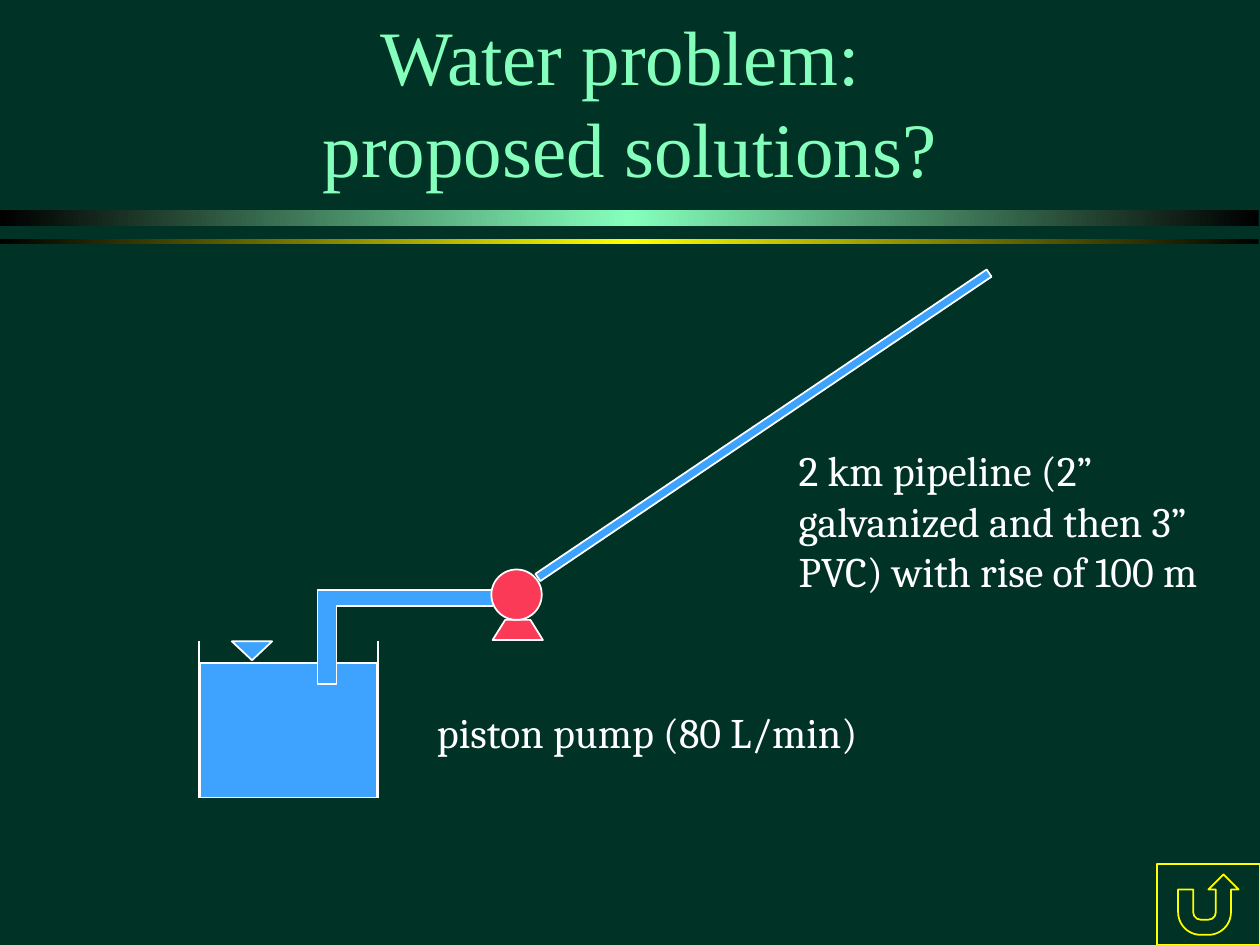
"""Builds the slide on proposed solutions to the water problem."""
from copy import deepcopy
from typing import NamedTuple, Optional

from lxml import etree
from pptx import Presentation
from pptx import util as u
from pptx.dml.color import RGBColor
from pptx.enum import shapes as s
from pptx.enum import text as t
from pptx.oxml import ns

BACKGROUND = RGBColor(0x00, 0x32, 0x25)
BLACK = RGBColor(0x00, 0x00, 0x00)
MINT = RGBColor(0x85, 0xFF, 0xBC)
YELLOW = RGBColor(0xFF, 0xFF, 0x00)
WHITE = RGBColor(0xFF, 0xFF, 0xFF)
WATER = RGBColor(0x3D, 0xA3, 0xFF)
PUMP = RGBColor(0xFA, 0x3A, 0x57)

KIND = s.MSO_SHAPE


class Box(NamedTuple):
    left: float
    top: float
    width: float
    height: float

    def inches(self) -> list:
        return [u.Inches(value) for value in self]


class Band(NamedTuple):
    box: Box
    color: RGBColor


class Part(NamedTuple):
    kind: KIND
    box: Box
    fill: Optional[RGBColor]
    line: RGBColor = WHITE
    rotation: float = 0


class Outline(NamedTuple):
    points: list
    fill: RGBColor
    closed: bool


class Label(NamedTuple):
    box: Box
    lines: list
    font: str = "Cambria"
    size: int = 24
    color: RGBColor = WHITE
    align: t.PP_ALIGN = t.PP_ALIGN.LEFT
    anchor: t.MSO_ANCHOR = t.MSO_ANCHOR.TOP
    wrap: bool = True
    shadow: bool = False


BANDS = [
    Band(Box(0, 1.67, 9.99, 0.12), MINT),
    Band(Box(0, 1.9, 9.99, 0.04), YELLOW),
]
TANK_WALLS = [
    ((1.58, 5.09), (1.58, 6.33)),
    ((1.59, 6.33), (2.99, 6.33)),
    ((3, 5.09), (3, 6.33)),
]
TANK_PARTS = [
    Part(KIND.ISOSCELES_TRIANGLE, Box(1.84, 5.09, 0.32, 0.15), WATER, rotation=180),
    Part(KIND.RECTANGLE, Box(1.59, 5.26, 1.4, 1.07), WATER),
]
PUMP_BASE = Outline([(3.91, 5.08), (4.01, 4.92), (4.21, 4.92), (4.31, 5.08)], PUMP, True)
PIPELINE = Part(KIND.RECTANGLE, Box(3.9, 3.34, 4.32, 0.07), WATER, rotation=326)
INTAKE = Outline(
    [(3.91, 4.68), (2.52, 4.68), (2.52, 5.43), (2.67, 5.43), (2.67, 4.81), (3.91, 4.81)],
    WATER, False)
PUMP_BODY = Part(KIND.OVAL, Box(3.9, 4.52, 0.4, 0.4), PUMP)
RETURN_BUTTON = Part(KIND.ACTION_BUTTON_RETURN, Box(9.18, 6.86, 0.82, 0.64), None, YELLOW)

TITLE = Label(Box(0.75, 0.33, 8.5, 1.25), ["Water problem: ", "proposed solutions?"],
              "Times New Roman", 44, MINT, t.PP_ALIGN.CENTER, t.MSO_ANCHOR.BOTTOM,
              shadow=True)
PUMP_LABEL = Label(Box(3.37, 5.56, 3.83, 0.51), ["piston pump (80 L/min)"], wrap=False)
PIPELINE_LABEL = Label(
    Box(6.24, 3.48, 3.56, 1.71),
    ["2 km pipeline (2” galvanized and then 3” PVC) with rise of 100 m"])


def style(shape, fill: Optional[RGBColor], line: RGBColor) -> None:
    shape.shadow.inherit = False
    if fill is None:
        shape.fill.background()
    else:
        shape.fill.solid()
        shape.fill.fore_color.rgb = fill
    shape.line.color.rgb = line
    shape.line.width = u.Pt(1)


def draw_band(tree, band: Band) -> None:
    shape = tree.add_shape(KIND.RECTANGLE, *band.box.inches())
    shape.shadow.inherit = False
    shape.line.fill.background()
    shape.fill.gradient()
    shape.fill.gradient_angle = 0
    stops = shape._element.spPr.find(".//" + ns.qn("a:gsLst"))
    stops.insert(1, deepcopy(stops[0]))
    colors = (BLACK, band.color, BLACK)
    for stop, position, color in zip(shape.fill.gradient_stops, (0, 0.5, 1), colors):
        stop.position = position
        stop.color.rgb = color


def draw_part(tree, part: Part) -> None:
    shape = tree.add_shape(part.kind, *part.box.inches())
    shape.rotation = part.rotation
    style(shape, part.fill, part.line)


def draw_outline(tree, outline: Outline) -> None:
    start, *rest = [(u.Inches(x), u.Inches(y)) for x, y in outline.points]
    builder = tree.build_freeform(*start)
    builder.add_line_segments(rest, close=outline.closed)
    style(builder.convert_to_shape(), outline.fill, WHITE)


def draw_wall(tree, start: tuple, end: tuple) -> None:
    ends = [u.Inches(value) for value in start + end]
    connector = tree.add_connector(s.MSO_CONNECTOR.STRAIGHT, *ends)
    connector.line.color.rgb = WHITE
    connector.line.width = u.Pt(1)
    etree.SubElement(connector._element.spPr, ns.qn("a:effectLst"))


def add_text_shadow(run) -> None:
    effects = etree.Element(ns.qn("a:effectLst"))
    shadow = etree.SubElement(effects, ns.qn("a:outerShdw"),
                              dist="38100", dir="2700000", algn="tl")
    etree.SubElement(shadow, ns.qn("a:srgbClr"), val=str(BLACK))
    run.font._element.find(ns.qn("a:solidFill")).addnext(effects)


def draw_label(tree, label: Label) -> None:
    frame = tree.add_textbox(*label.box.inches()).text_frame
    frame.word_wrap = label.wrap
    frame.vertical_anchor = label.anchor
    paragraph = frame.paragraphs[0]
    paragraph.alignment = label.align
    for index, line in enumerate(label.lines):
        if index:
            paragraph.add_line_break()
        run = paragraph.add_run()
        run.text = line
        run.font.name = label.font
        run.font.size = u.Pt(label.size)
        run.font.color.rgb = label.color
        if label.shadow:
            add_text_shadow(run)


def draw_tank(tree) -> None:
    group = tree.add_group_shape().shapes
    for start, end in TANK_WALLS:
        draw_wall(group, start, end)
    for part in TANK_PARTS:
        draw_part(group, part)


def main() -> None:
    presentation = Presentation()
    presentation.slide_width = u.Inches(10)
    presentation.slide_height = u.Inches(7.5)
    slide = presentation.slides.add_slide(presentation.slide_layouts[6])
    slide.background.fill.solid()
    slide.background.fill.fore_color.rgb = BACKGROUND
    tree = slide.shapes
    for band in BANDS:
        draw_band(tree, band)
    draw_label(tree, TITLE)
    draw_tank(tree)
    draw_outline(tree, PUMP_BASE)
    draw_part(tree, PIPELINE)
    draw_label(tree, PUMP_LABEL)
    draw_outline(tree, INTAKE)
    draw_label(tree, PIPELINE_LABEL)
    draw_part(tree, PUMP_BODY)
    draw_part(tree, RETURN_BUTTON)
    presentation.save("out.pptx")


if __name__ == "__main__":
    main()
